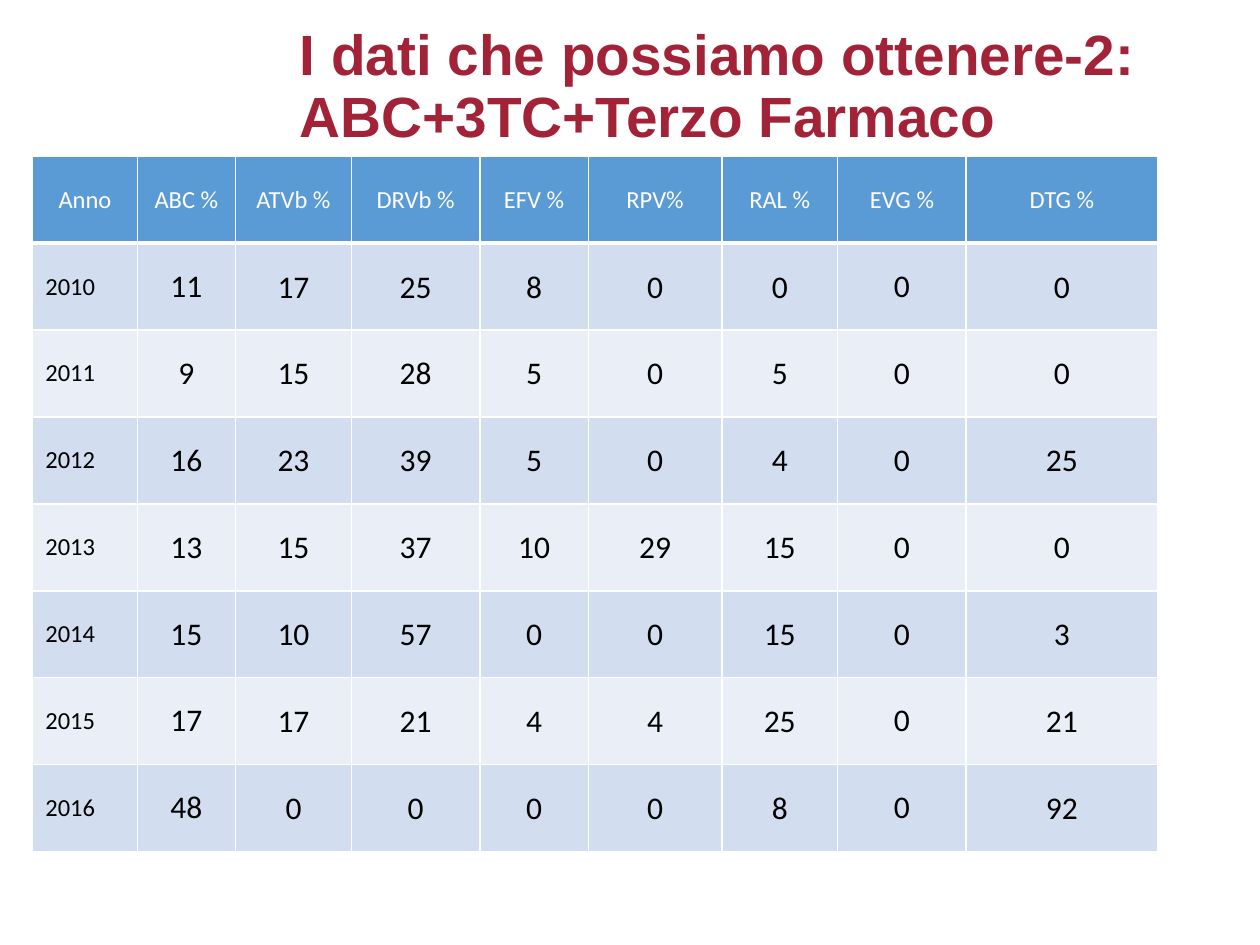
from dataclasses import dataclass

from pptx import Presentation
from pptx.dml.color import RGBColor
from pptx.enum.text import MSO_ANCHOR as Anchor, MSO_AUTO_SIZE as AutoSize, PP_ALIGN as Align
from pptx.oxml.ns import qn
from pptx.util import Inches, Pt
from lxml.etree import SubElement


@dataclass(frozen=True)
class Theme:
    """Colours, fonts and type sizes of the deck."""
    title_color: str = "A22338"
    header_fill: str = "5B9BD5"
    band_fills: tuple = ("D2DEEF", "EAEFF7")
    white: str = "FFFFFF"
    black: str = "000000"
    title_font: str = "Arial"
    body_font: str = "Calibri"
    title_size: float = 32.4
    label_size: float = 14
    value_size: float = 18
    thin_line: float = 1
    thick_line: float = 3


HEADERS = ["Anno", "ABC %", "ATVb %", "DRVb %", "EFV %", "RPV%", "RAL %", "EVG %", "DTG %"]
SHARES_BY_YEAR = {
    2010: [11, 17, 25, 8, 0, 0, 0, 0],
    2011: [9, 15, 28, 5, 0, 5, 0, 0],
    2012: [16, 23, 39, 5, 0, 4, 0, 25],
    2013: [13, 15, 37, 10, 29, 15, 0, 0],
    2014: [15, 10, 57, 0, 0, 15, 0, 3],
    2015: [17, 17, 21, 4, 4, 25, 0, 21],
    2016: [48, 0, 0, 0, 0, 8, 0, 92],
}
COLUMN_WIDTHS = [0.83, 0.78, 0.92, 1.02, 0.86, 1.06, 0.92, 1.02, 1.52]
ROW_HEIGHT = 0.69
WIDE_MARGIN_COLUMNS = {"Anno", "ABC %", "EVG %"}


class SlideBuilder:
    """Draws styled elements on the current slide."""

    def __init__(self, page, theme):
        self.page = page
        self.theme = theme

    def style(self, para, font, size, color, bold=False):
        """Format the runs of a paragraph."""
        for span in para.runs:
            span.font.name = font
            span.font.size = Pt(size)
            span.font.bold = bold
            span.font.color.rgb = RGBColor.from_string(color)

    def title(self, text, left, top, width, height):
        """Place and format the title placeholder."""
        box = self.page.shapes.title
        box.left, box.top = Inches(left), Inches(top)
        box.width, box.height = Inches(width), Inches(height)
        frame = box.text_frame
        frame.text = text
        frame.word_wrap = True
        frame.auto_size = AutoSize.NONE
        frame.vertical_anchor = Anchor.MIDDLE
        para = frame.paragraphs[0]
        para.alignment = Align.LEFT
        para.line_spacing = 0.9
        theme = self.theme
        self.style(para, theme.title_font, theme.title_size, theme.title_color, True)

    def borders(self, cell, bottom):
        """Draw white lines on the four sides of a cell."""
        properties = cell._tc.get_or_add_tcPr()
        thin = self.theme.thin_line
        for side, width in (("L", thin), ("R", thin), ("T", thin), ("B", bottom)):
            line = SubElement(properties, qn(f"a:ln{side}"), w=str(Pt(width)))
            fill = SubElement(line, qn("a:solidFill"))
            SubElement(fill, qn("a:srgbClr"), val=self.theme.white)

    def cell(self, cell, text, size, color, fill, align, bottom):
        """Fill one table cell with centred-height text."""
        cell.text = text
        cell.vertical_anchor = Anchor.MIDDLE
        para = cell.text_frame.paragraphs[0]
        para.alignment = align
        self.style(para, self.theme.body_font, size, color)
        self.borders(cell, bottom)
        cell.fill.solid()
        cell.fill.fore_color.rgb = RGBColor.from_string(fill)

    def table(self, headers, records, widths, row_height, left, top):
        """Add a banded table with a header row and a label column."""
        theme = self.theme
        count = len(records) + 1
        table = self.page.shapes.add_table(
            count, len(headers), Inches(left), Inches(top),
            Inches(sum(widths)), Inches(row_height * count)).table
        for column, width in zip(table.columns, widths):
            column.width = Inches(width)
        for row in table.rows:
            row.height = Inches(row_height)
        for column, header in enumerate(headers):
            self.cell(table.cell(0, column), header, theme.label_size, theme.white,
                      theme.header_fill, Align.CENTER, theme.thick_line)
        for row, (label, values) in enumerate(records.items(), 1):
            fill = theme.band_fills[(row - 1) % 2]
            for column, value in enumerate([label, *values]):
                cell = table.cell(row, column)
                size = theme.value_size if column else theme.label_size
                align = Align.CENTER if column else Align.LEFT
                self.cell(cell, str(value), size, theme.black, fill, align, theme.thin_line)
                if headers[column] not in WIDE_MARGIN_COLUMNS:
                    cell.margin_left = cell.margin_top = cell.margin_right = Inches(0.01)
                    cell.margin_bottom = 0


def main():
    """Build and save the deck."""
    deck = Presentation()
    deck.slide_width, deck.slide_height = Inches(10), Inches(7.5)
    page = deck.slides.add_slide(deck.slide_layouts[5])
    builder = SlideBuilder(page, Theme())
    builder.title("I dati che possiamo ottenere-2:\vABC+3TC+Terzo Farmaco", 2.28, 0.15, 7.44, 1.1)
    builder.table(HEADERS, SHARES_BY_YEAR, COLUMN_WIDTHS, ROW_HEIGHT, 0.26, 1.24)
    deck.save("out.pptx")


if __name__ == "__main__":
    main()
